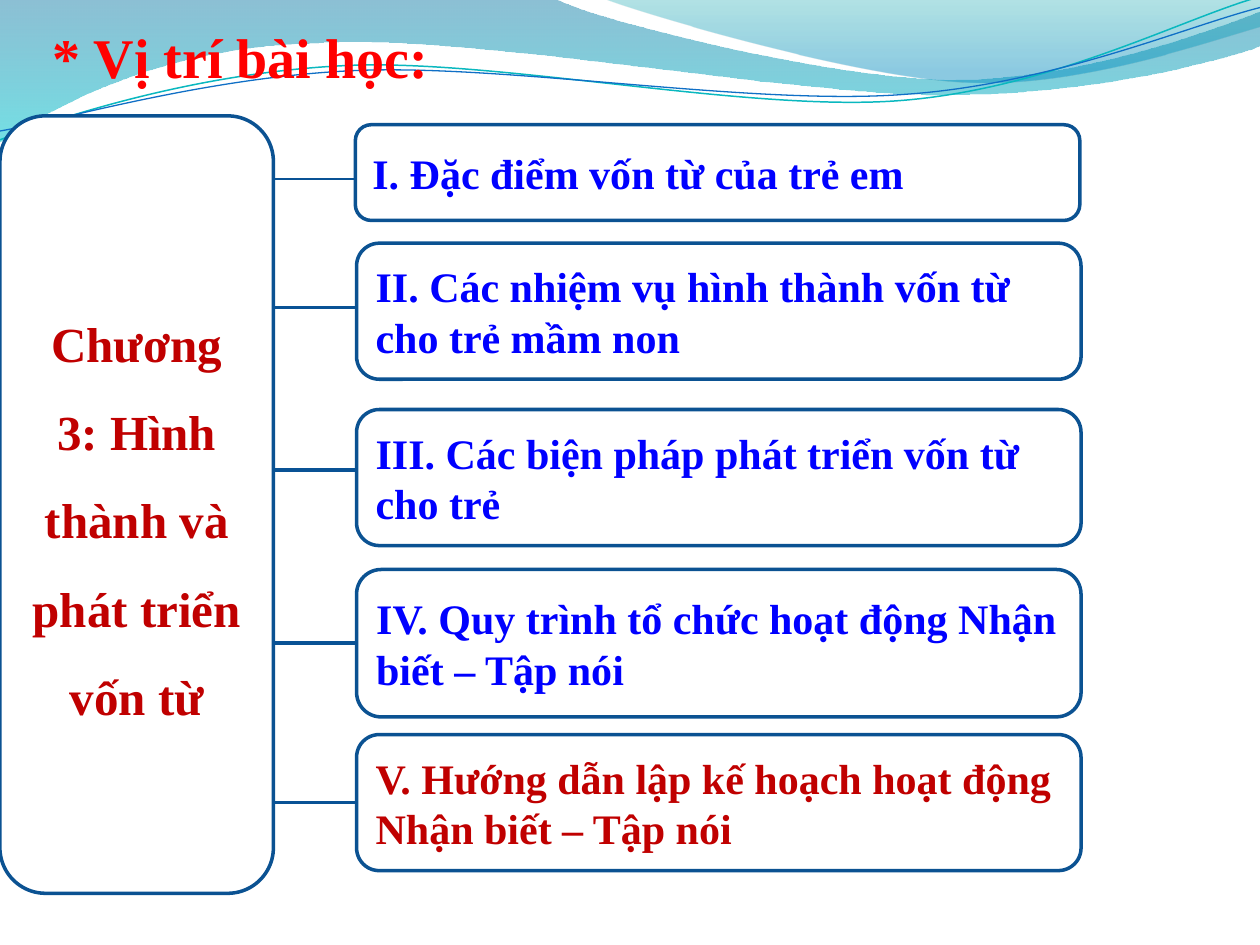
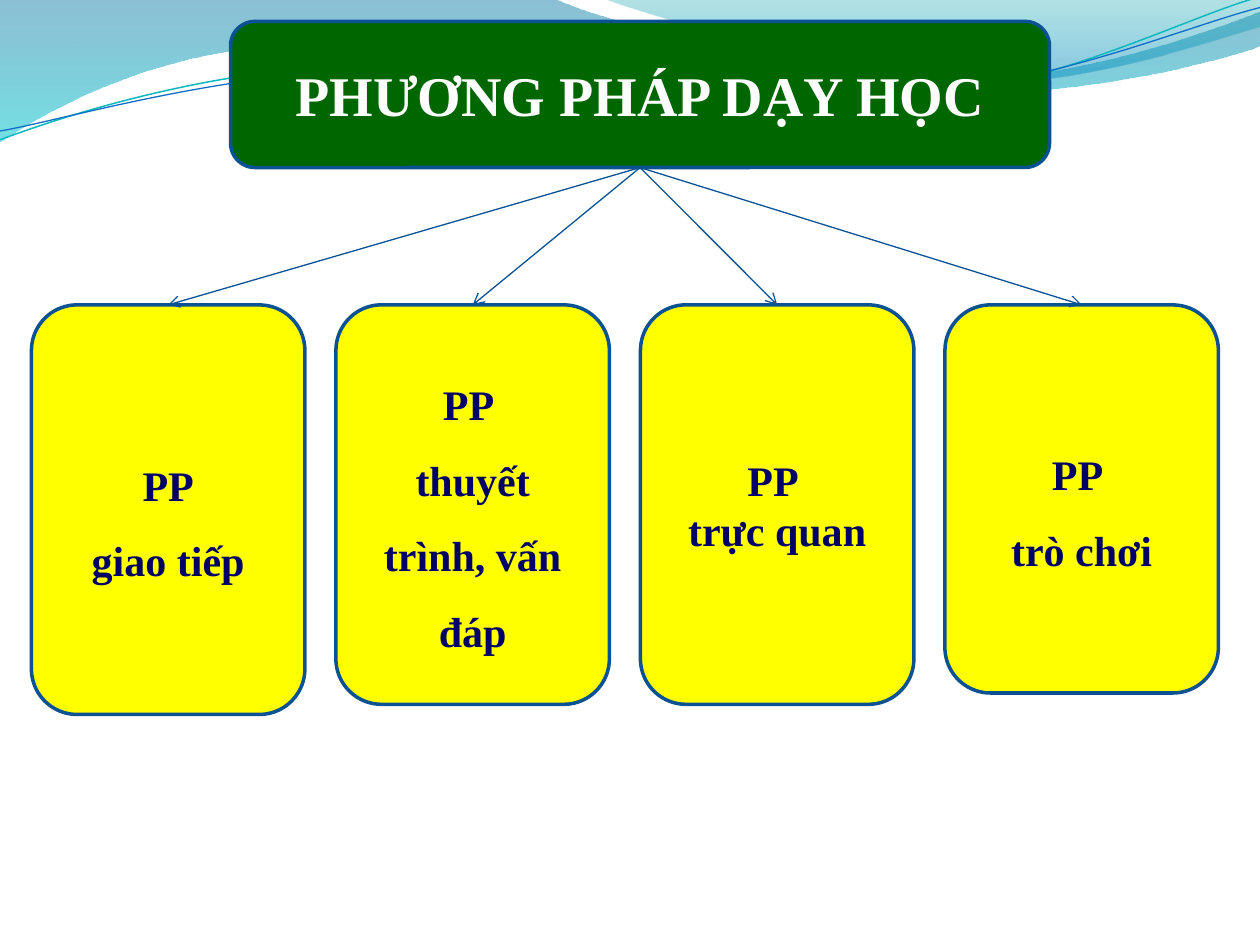
from dataclasses import dataclass

from lxml.etree import SubElement
from pptx import Presentation
from pptx.dml.color import RGBColor
from pptx.enum.shapes import MSO_CONNECTOR, MSO_SHAPE
from pptx.enum.text import MSO_ANCHOR, MSO_AUTO_SIZE, PP_ALIGN
from pptx.oxml.ns import qn
from pptx.util import Inches, Pt


@dataclass(frozen=True)
class Theme:
    font: str = "Times New Roman"
    title_size: int = 32
    chapter_size: int = 28
    body_size: int = 24
    border_width: float = 2
    thin_width: float = 0.75
    border: str = "0B5292"
    link: str = "095295"
    white: str = "FFFFFF"
    title: str = "FF0000"
    section: str = "0000FF"
    highlight: str = "C00000"
    header: str = "006600"
    card: str = "FFFF00"
    card_text: str = "000066"
    left_wave: tuple = ((0, "0074A1", 45), (1, "00C6CF", 55))
    right_wave: tuple = ((0, "00A1A9", 30), (0.8, "008BBF", 45))
    upper_line: tuple = ("0AB8BF", 0.85)
    lower_line: tuple = ("0F6FC6", 0.75)


theme = Theme()


def add_box(slide, bounds, paragraphs, size, color, fill=None, align=PP_ALIGN.LEFT, spacing=None):
    position = [Inches(value) for value in bounds]
    if fill:
        shape = slide.shapes.add_shape(MSO_SHAPE.ROUNDED_RECTANGLE, *position)
        shape.shadow.inherit = False
        shape.fill.solid()
        shape.fill.fore_color.rgb = RGBColor.from_string(fill)
        shape.line.color.rgb = RGBColor.from_string(theme.border)
        shape.line.width = Pt(theme.border_width)
        frame_format = {"word_wrap": True, "vertical_anchor": MSO_ANCHOR.MIDDLE}
    else:
        shape = slide.shapes.add_textbox(*position)
        frame_format = {"word_wrap": True, "auto_size": MSO_AUTO_SIZE.SHAPE_TO_FIT_TEXT}
    frame = shape.text_frame
    for name, value in frame_format.items():
        setattr(frame, name, value)
    frame.text = "\n".join(paragraphs)
    font_format = {"name": theme.font, "size": Pt(size), "bold": True}
    for paragraph in frame.paragraphs:
        paragraph.alignment = align
        paragraph.line_spacing = spacing
        font = paragraph.runs[0].font
        for name, value in font_format.items():
            setattr(font, name, value)
        font.color.rgb = RGBColor.from_string(color)
    return shape


def add_link(slide, start, end, width, arrow=False):
    points = [Inches(value) for value in (*start, *end)]
    link = slide.shapes.add_connector(MSO_CONNECTOR.STRAIGHT, *points)
    link.line.color.rgb = RGBColor.from_string(theme.link)
    link.line.width = Pt(width)
    properties = link._element.spPr
    if arrow:
        SubElement(properties.find(qn("a:ln")), qn("a:tailEnd"), type="arrow")
    SubElement(properties, qn("a:effectLst"))
    return link


presentation = Presentation()
presentation.slide_width = Inches(10)
presentation.slide_height = Inches(7.5)
blank_layout = presentation.slide_layouts[6]
position_slide, method_slide = [presentation.slides.add_slide(blank_layout) for _ in range(2)]

waves = [
    {
        "start": (0, 0),
        "segments": [
            [(4.4, -0.01)],
            [(4.76, 0.17), (6.64, 0.63), (7.58, 0.63)],
            [(8.53, 0.63), (9.58, 0.26), (10, 0.09)],
            [(10.01, 0.36)],
            [(9.83, 0.44), (8.7, 0.76), (7.46, 0.75)],
            [(6.22, 0.75), (3.82, 0.28), (2.57, 0.34)],
            [(1.29, 0.36), (0.46, 0.83), (-0.01, 1.13)],
        ],
        "gradient": theme.left_wave,
    },
    {
        "start": (4.79, -0.01),
        "segments": [
            [(5.09, 0.11), (6.82, 0.62), (7.69, 0.65)],
            [(8.56, 0.69), (9.61, 0.32), (10, 0.21)],
            [(10, 0)],
        ],
        "gradient": theme.right_wave,
    },
    {
        "start": (0, 1.11),
        "segments": [
            [(0.48, 0.93), (1.58, 0.57), (2.77, 0.52)],
            [(3.95, 0.47), (5.93, 0.89), (7.13, 0.8)],
            [(8.33, 0.71), (9.38, 0.15), (9.98, -0.02)],
        ],
        "line": theme.upper_line,
    },
    {
        "start": (0, 1.04),
        "segments": [
            [(0.47, 0.96), (1.64, 0.61), (2.83, 0.56)],
            [(4.03, 0.51), (5.97, 0.84), (7.17, 0.75)],
            [(8.36, 0.67), (9.41, 0.21), (10, 0.06)],
        ],
        "line": theme.lower_line,
    },
]

for index, wave in enumerate(waves):
    points = [wave["start"]] + [point for segment in wave["segments"] for point in segment]
    points = [(round(x * 100), round(y * 100)) for x, y in points]
    builder = position_slide.shapes.build_freeform(*points[0], scale=Inches(0.01))
    builder.add_line_segments(points[1:], close="gradient" in wave)
    shape = builder.convert_to_shape()
    shape.shadow.inherit = False
    properties = shape._element.spPr
    outline = next(properties.iter(qn("a:path")))
    steps = iter(outline.findall(qn("a:lnTo")))
    for segment in wave["segments"]:
        curve = next(steps)
        if len(segment) == 3:
            curve.tag = qn("a:cubicBezTo")
            for _ in range(2):
                step = next(steps)
                curve.append(step[0])
                outline.remove(step)
    if "gradient" in wave:
        shape.line.fill.background()
        shape.fill.gradient()
        shape.fill.gradient_angle = 270
        for stop, (offset, color, _) in zip(shape.fill.gradient_stops, wave["gradient"]):
            stop.position = offset
            stop.color.rgb = RGBColor.from_string(color)
        for element, (_, _, opacity) in zip(properties.iter(qn("a:srgbClr")), wave["gradient"]):
            SubElement(element, qn("a:alpha"), val=str(opacity * 1000))
    else:
        color, width = wave["line"]
        shape.fill.background()
        shape.line.color.rgb = RGBColor.from_string(color)
        shape.line.width = Pt(width)
    shape._element.nvSpPr.cNvPr.set("id", str(100 + index))
    presentation.slide_master.shapes._spTree.append(shape._element)

add_box(
    position_slide, (0, 0.92, 2.17, 6.17), ["Chương 3: Hình thành và phát triển vốn từ"],
    theme.chapter_size, theme.highlight, theme.white, PP_ALIGN.CENTER, 1.5,
)
sections = [
    ("I. Đặc điểm vốn từ của trẻ em", 2.82, 0.99, 0.76, 1.42, theme.section, theme.thin_width),
    ("II. Các nhiệm vụ hình thành vốn từ cho trẻ mầm non",
     2.83, 1.93, 1.08, 2.44, theme.section, theme.border_width),
    ("III. Các biện pháp phát triển vốn từ cho trẻ",
     2.83, 3.25, 1.08, 3.73, theme.section, theme.border_width),
    ("IV. Quy trình tổ chức hoạt động Nhận biết – Tập nói",
     2.83, 4.52, 1.17, 5.1, theme.section, theme.border_width),
    ("V. Hướng dẫn lập kế hoạch hoạt động Nhận biết – Tập nói",
     2.83, 5.83, 1.08, 6.38, theme.highlight, theme.border_width),
]
for text, left, top, height, link_y, color, width in sections:
    section_box = add_box(
        position_slide, (left, top, 5.75, height), [text], theme.body_size, color, theme.white
    )
    middle = top + height / 2
    at_middle = abs(middle - link_y) < 0.02
    if at_middle:
        link_y = middle
    link = add_link(position_slide, (2.17, link_y), (2.83, link_y), width)
    if at_middle:
        link.end_connect(section_box, 1)
add_box(position_slide, (0.32, 0.13, 5, 0.64), ["* Vị trí bài học:"], theme.title_size, theme.title)

header_box = add_box(
    method_slide, (1.83, 0.17, 6.5, 1.16), ["PHƯƠNG PHÁP DẠY HỌC"],
    theme.title_size, theme.white, theme.header, PP_ALIGN.CENTER,
)
methods = [
    (["PP", "giao tiếp"], 3.25, 1.5),
    (["PP ", "thuyết trình, vấn đáp"], 3.17, 1.5),
    (["PP ", "trực quan"], 3.17, None),
    (["PP ", "trò chơi"], 3.08, 1.5),
]
card_top, card_width = 2.42, 2.17
card_pitch = (7.5 - 0.25) / (len(methods) - 1)
for index, (paragraphs, height, spacing) in enumerate(methods):
    left = 0.25 + index * card_pitch
    card = add_box(
        method_slide, (left, card_top, card_width, height), paragraphs,
        theme.body_size, theme.card_text, theme.card, PP_ALIGN.CENTER, spacing,
    )
    link = add_link(
        method_slide, (5.08, 1.33), (left + card_width / 2, card_top), theme.thin_width, arrow=True
    )
    link.begin_connect(header_box, 2)
    link.end_connect(card, 0)

presentation.save("out.pptx")
